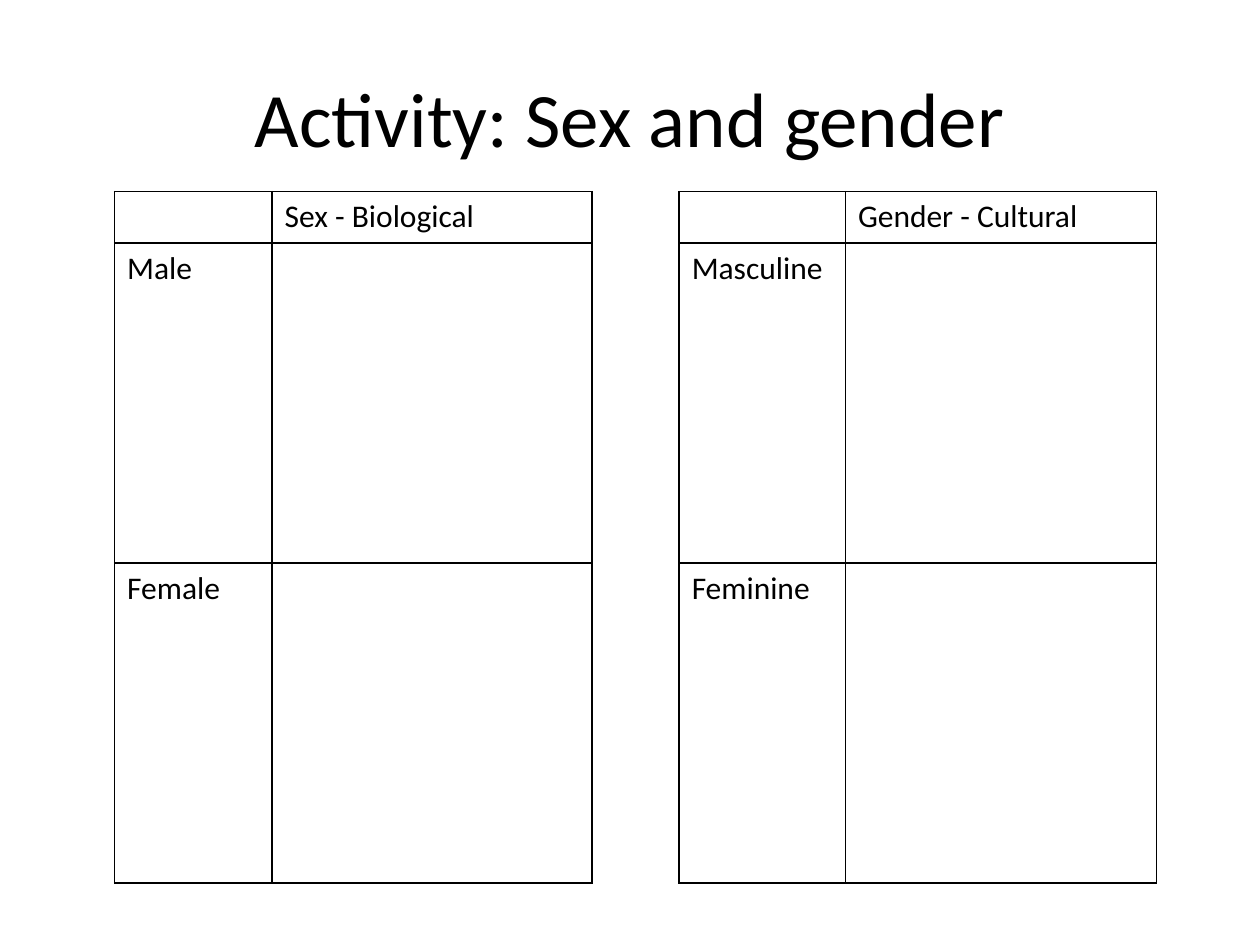
from dataclasses import dataclass

from lxml.etree import SubElement
from pptx import Presentation
from pptx.dml.color import RGBColor
from pptx.enum.text import MSO_ANCHOR, PP_ALIGN
from pptx.oxml.ns import qn
from pptx.util import Inches, Pt


@dataclass(frozen=True)
class Theme:
    font: str = "Calibri"
    ink: str = "000000"
    paper: str = "FFFFFF"
    title_size: int = 44
    cell_size: int = 18
    border: int = 1


def write_text(tf, text, font, size, color, align=PP_ALIGN.LEFT, anchor=MSO_ANCHOR.TOP):
    tf.word_wrap = True
    tf.vertical_anchor = anchor
    p = tf.paragraphs[0]
    p.alignment = align
    r = p.add_run()
    r.text = text
    r.font.name = font
    r.font.size = Pt(size)
    r.font.bold = False
    r.font.color.rgb = RGBColor.from_string(color)


class SlideBuilder:
    def __init__(self, prs, theme):
        self.theme = theme
        self.s = prs.slides.add_slide(prs.slide_layouts[5])
        fill = self.s.background.fill
        fill.solid()
        fill.fore_color.rgb = RGBColor.from_string(theme.paper)

    def title(self, text, left, top, width, height):
        sp = self.s.shapes.title
        sp.left, sp.top = Inches(left), Inches(top)
        sp.width, sp.height = Inches(width), Inches(height)
        write_text(sp.text_frame, text, self.theme.font, self.theme.title_size,
                   self.theme.ink, PP_ALIGN.CENTER, MSO_ANCHOR.MIDDLE)

    def border_cell(self, cell):
        tcPr = cell._tc.get_or_add_tcPr()
        for side in ("a:lnL", "a:lnR", "a:lnT", "a:lnB"):
            ln = SubElement(tcPr, qn(side), w=str(Pt(self.theme.border)))
            fill = SubElement(ln, qn("a:solidFill"))
            SubElement(fill, qn("a:srgbClr"), val=self.theme.ink)

    def table(self, rows, left, top, col_widths, row_heights):
        frame = self.s.shapes.add_table(
            len(rows), len(col_widths), Inches(left), Inches(top),
            Inches(sum(col_widths)), Inches(sum(row_heights)))
        table = frame.table
        table.first_row = table.horz_banding = False
        for column, width in zip(table.columns, col_widths):
            column.width = Inches(width)
        for row, height, texts in zip(table.rows, row_heights, rows):
            row.height = Inches(height)
            for cell, text in zip(row.cells, texts):
                self.border_cell(cell)
                cell.fill.background()
                if text:
                    write_text(cell.text_frame, text, self.theme.font,
                               self.theme.cell_size, self.theme.ink)


def main():
    prs = Presentation()
    prs.slide_width, prs.slide_height = Inches(10), Inches(7.5)
    slide = SlideBuilder(prs, Theme())
    slide.title("Activity: Sex and gender", 0.5, 0.3, 9, 1.25)

    row_heights = (0.41, 2.54, 2.54)
    worksheets = (
        (0.91, (1.25, 2.54), "Sex - Biological", "Male", "Female"),
        (5.39, (1.32, 2.47), "Gender - Cultural", "Masculine", "Feminine"),
    )
    for left, col_widths, heading, first, second in worksheets:
        rows = (("", heading), (first, ""), (second, ""))
        slide.table(rows, left, 1.52, col_widths, row_heights)

    prs.save("out.pptx")


if __name__ == "__main__":
    main()
